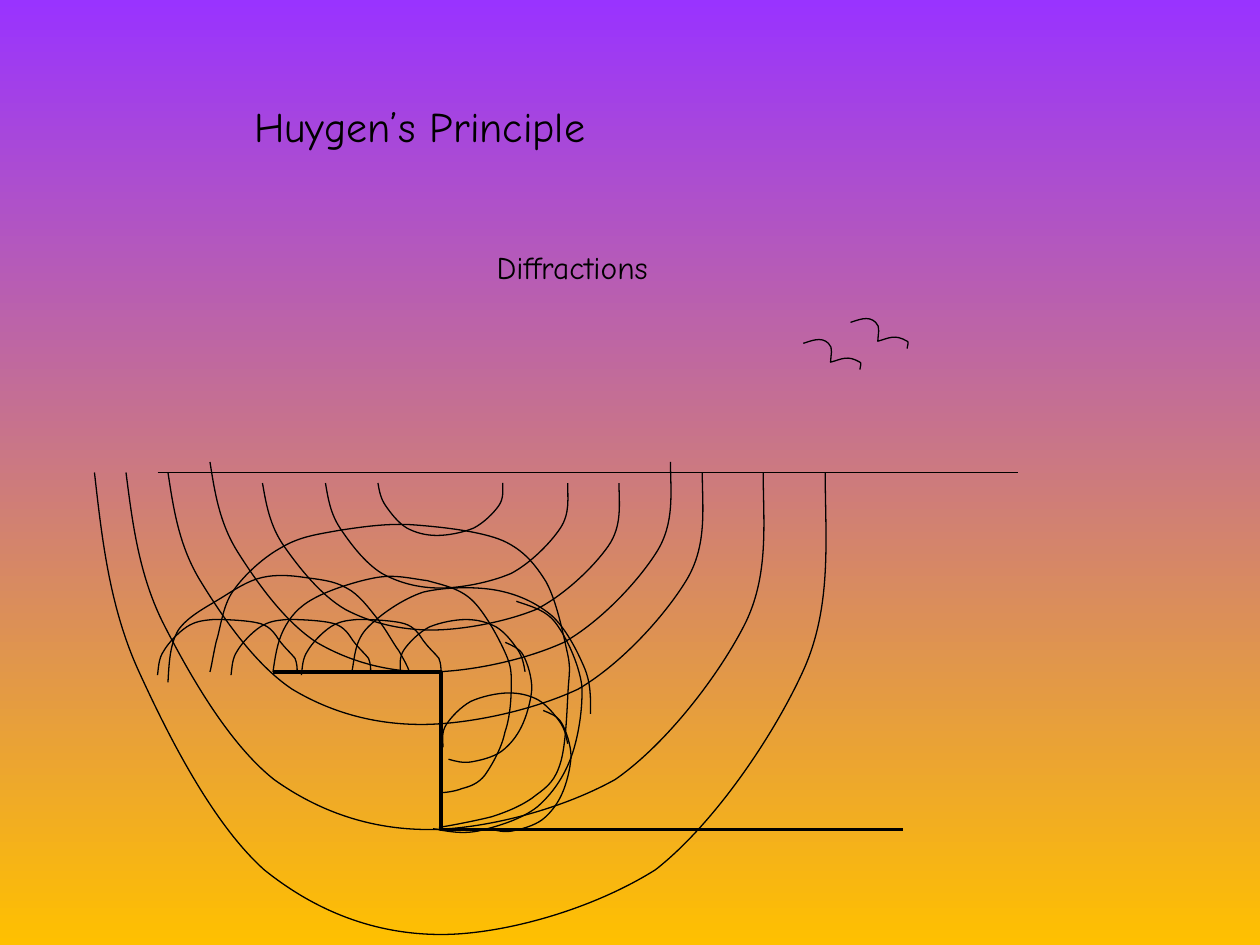
import pptx
import pptx.util
import pptx.dml.color
import pptx.enum.shapes
import pptx.enum.text
import pptx.oxml.ns

COLORS = {"ink": "000000", "sky": "9933FF", "ground": "FFC000"}
FONT = "Comic Neue"
INK = pptx.dml.color.RGBColor.from_string(COLORS["ink"])

# Grid: 120 columns by 90 rows
deck = pptx.Presentation()
deck.slide_width = pptx.util.Inches(10)
deck.slide_height = pptx.util.Inches(7.5)
CELL = deck.slide_width / 120
slide = deck.slides.add_slide(deck.slide_layouts[5])


def draw_path(points, curved=True, weight=0.75):
    """Open outline in grid cells; curved points come in Bezier triples."""
    emu = [(round(x * CELL), round(y * CELL)) for x, y in points]
    builder = slide.shapes.build_freeform(*emu[0])
    builder.add_line_segments(emu[1:], close=False)
    outline = builder.convert_to_shape()
    outline.shadow.inherit = False
    outline.fill.background()
    outline.line.color.rgb = INK
    outline.line.width = pptx.util.Pt(weight)
    if curved:
        route = outline._element.find(".//" + pptx.oxml.ns.qn("a:path"))
        steps = route.findall(pptx.oxml.ns.qn("a:lnTo"))
        for first in range(0, len(steps), 3):
            bezier = route.makeelement(pptx.oxml.ns.qn("a:cubicBezTo"), {})
            for step in steps[first:first + 3]:
                bezier.append(step[0])
                route.remove(step)
            route.append(bezier)
    return outline


def write_text(box, text, size, align, left, top, width, height):
    box.left, box.top, box.width, box.height = (
        round(v * CELL) for v in (left, top, width, height))
    frame = box.text_frame
    frame.word_wrap = True
    frame.auto_size = pptx.enum.text.MSO_AUTO_SIZE.NONE
    frame.vertical_anchor = pptx.enum.text.MSO_ANCHOR.TOP
    paragraph = frame.paragraphs[0]
    paragraph.alignment = align
    run = paragraph.add_run()
    run.text = text
    run.font.name = FONT
    run.font.size = pptx.util.Pt(size)
    run.font.color.rgb = INK


# Sunset background
sunset = slide.background.fill
sunset.gradient()
sunset.gradient_angle = 270
for stop, name, position in zip(sunset.gradient_stops, ("sky", "ground"), (0, 1)):
    stop.color.rgb = pptx.dml.color.RGBColor.from_string(COLORS[name])
    stop.position = position

# Title and subtitle
write_text(slide.shapes.title, "Huygen’s Principle", 24,
           pptx.enum.text.PP_ALIGN.LEFT, 23, 9, 65, 6)
write_text(slide.shapes.add_textbox(0, 0, 0, 0), "Diffractions", 18,
           pptx.enum.text.PP_ALIGN.CENTER, 25, 23, 59, 4.8)

# Ground surface
surface = slide.shapes.add_connector(
    pptx.enum.shapes.MSO_CONNECTOR.STRAIGHT,
    *(round(v * CELL) for v in (15, 45, 97, 45)))
surface.line.color.rgb = INK
surface.line.width = pptx.util.Pt(0.75)
surface_style = surface._element.spPr
surface_style.append(
    surface_style.makeelement(pptx.oxml.ns.qn("a:effectLst"), {}))

# Birds
BIRD = [(0, 0.7), (0.7, 0.5), (1.7, 0), (2.4, 0.7), (2.9, 1.1), (2.6, 1.9),
        (2.6, 2.5), (3.7, 2.2), (4.2, 1.8), (5.4, 2.5), (5.6, 2.5), (5.4, 3),
        (5.4, 3.2)]
for left, top in [(76.5, 32), (81, 30)]:
    draw_path([(left + x, top + y) for x, y in BIRD])

# Wavefronts: one bowl profile, scaled to left, top, width, height and rotated
BOWL = [(0, 0), (0.01, 0.14), (0.02, 0.29), (0.06, 0.43), (0.1, 0.57),
        (0.16, 0.76), (0.23, 0.86), (0.3, 0.95), (0.38, 1), (0.47, 1),
        (0.55, 1), (0.67, 0.95), (0.76, 0.86), (0.84, 0.76), (0.92, 0.57),
        (0.96, 0.43), (1, 0.29), (0.99, 0.14), (0.99, 0)]
INCIDENT = [(25, 46, 34.3, 14, 0), (31, 46, 23.3, 10, 0), (36, 46, 12, 5, 0),
            (20, 44, 44.3, 20, 0), (12, 45, 61.3, 34, 0),
            (16, 45, 51.4, 24, 0), (9, 45, 70.3, 44, 0)]
DIFFRACTED = [(38, 59, 12, 5, 179.8), (41.4, 65.3, 12.5, 4.9, 295.9),
              (34, 56, 23.3, 10, 190.2), (38.3, 64.7, 23.3, 10, 290.1),
              (42, 66, 12, 5, 178.4), (45.2, 71.8, 12.5, 4.9, 294.3)]
for left, top, width, height, angle in INCIDENT + DIFFRACTED:
    wave = draw_path([(left + x * width, top + y * height) for x, y in BOWL])
    wave.rotation = angle

# Stepped reflector
draw_path([(26, 64), (42, 64), (42, 79), (86, 79)], curved=False, weight=2)

# Small wavelets along the upper ledge
WAVELET = [(0, 5.3), (0.1, 4.6), (0.1, 3.7), (0.6, 3), (1, 2.3), (1.9, 1.3),
           (2.8, 0.7), (3.6, 0.2), (4.2, 0.1), (5.4, 0), (6.6, 0), (8.8, 0.1),
           (9.8, 0.4), (10.8, 0.7), (11.2, 1.4), (11.6, 2), (12.2, 2.8),
           (12.7, 3.2), (13.1, 3.7), (13.3, 4.2), (13.3, 4.7), (13.3, 4.9)]
for left in (22, 15, 28.7):
    draw_path([(left + x, 59 + y) for x, y in WAVELET])

# Combined fronts wrapping around the step
INNER_FRONT = [
    (26, 64), (26.2, 62.6), (26.4, 61.2), (27, 60), (27.6, 58.8), (28.4, 57.8),
    (29.9, 57), (31.3, 56.2), (34.1, 55.3), (35.9, 55), (37.7, 54.7),
    (39.1, 55.1), (40.7, 55.3), (42.1, 55.7), (43.7, 56), (44.9, 57.1),
    (46.1, 58.2), (47.4, 60.6), (48, 61.9), (48.6, 63.2), (48.7, 63.7),
    (48.7, 65), (48.7, 66.4), (48.6, 68.3), (48.1, 69.7), (47.8, 71.2),
    (46.9, 72.8), (46.2, 73.8), (45.6, 74.6), (44.8, 74.9), (44, 75.1),
    (43.3, 75.4), (42.2, 75.5), (41.9, 75.5)]
OUTER_FRONT = [
    (20, 64), (20.2, 63.2), (20.3, 62.4), (20.6, 61.1), (21, 59.9),
    (21.2, 57.7), (22.2, 56.3), (23.3, 54.7), (25.2, 53), (26.9, 52.1),
    (28.6, 51.1), (30.2, 50.9), (32.4, 50.5), (34.4, 50.2), (37, 49.8),
    (39.5, 50), (42.1, 50.2), (45.8, 50.6), (47.9, 51.5), (49.9, 52.4),
    (51, 53.8), (52, 55.4), (53, 57.2), (53.6, 60.2), (54, 62), (54.4, 63.7),
    (54.2, 64.1), (54.1, 65.9), (54, 67.7), (53.9, 70.9), (53.4, 72.6),
    (52.9, 74.3), (52.2, 74.9), (51.1, 75.7), (50, 76.6), (48.4, 77.3),
    (46.8, 77.8), (45.2, 78.2), (42.6, 78.7), (41.8, 78.8)]
LEDGE_FRONT = [
    (16, 65), (16.1, 63.1), (16.2, 61.3), (17, 60), (17.9, 58.7), (19.7, 57.8),
    (21, 57), (22.3, 56.2), (23.6, 55.3), (25, 55), (26.3, 54.7), (27.7, 54.8),
    (29, 55), (30.4, 55.2), (31.8, 55.3), (33, 56), (34.2, 56.6), (35.2, 58),
    (36, 59), (36.8, 60), (37.4, 61.2), (38, 62), (38.5, 62.9), (38.8, 63.4),
    (39, 64)]
for front in (INNER_FRONT, OUTER_FRONT, LEDGE_FRONT):
    draw_path(front)

deck.save("out.pptx")
